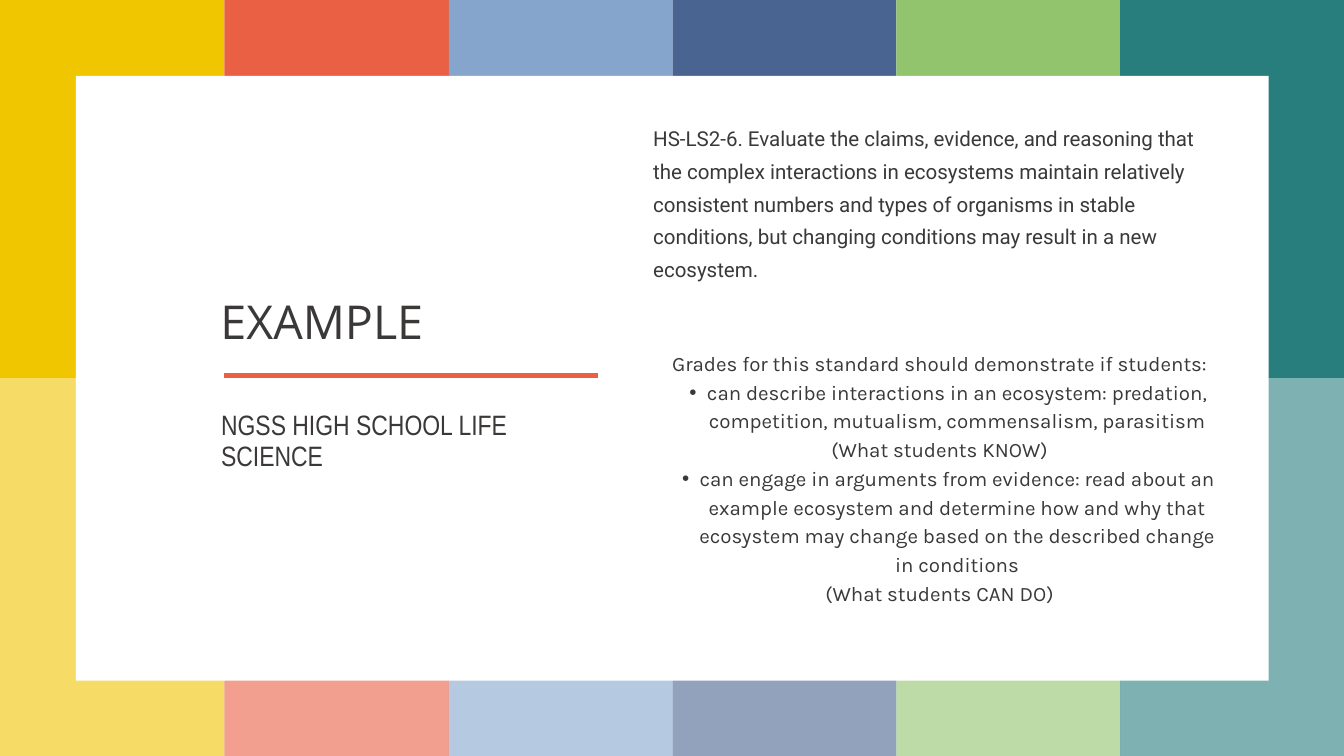
from lxml.etree import SubElement
from pptx import Presentation
from pptx.dml.color import RGBColor
from pptx.enum.shapes import MSO_CONNECTOR, MSO_SHAPE
from pptx.enum.text import MSO_AUTO_SIZE, PP_ALIGN
from pptx.oxml.ns import qn
from pptx.util import Inches, Pt

COLORS = {
    "yellow": "F0C600", "coral": "EA6045", "sky": "85A5CC",
    "navy": "4A6491", "green": "91C46C", "teal": "287D7D",
    "white": "FFFFFF", "text": "3B3838",
}

prs = Presentation()
prs.slide_width, prs.slide_height = Inches(20), Inches(11.25)
slide = prs.slides.add_slide(prs.slide_layouts[6])


def add_block(left, top, width, height, color, opacity=100):
    block = slide.shapes.add_shape(
        MSO_SHAPE.RECTANGLE, Inches(left), Inches(top), Inches(width), Inches(height))
    block.shadow.inherit = False
    block.line.fill.background()
    block.fill.solid()
    block.fill.fore_color.rgb = RGBColor.from_string(COLORS[color])
    if opacity < 100:
        srgb = block.fill._xPr.find(qn("a:solidFill"))[0]
        SubElement(srgb, qn("a:alpha"), val=str(opacity * 1000))


def add_text(left, top, width, height, paragraphs, font, size, spacing, align=PP_ALIGN.LEFT):
    """Each paragraph is a pair: its text and whether it is bulleted."""
    frame = slide.shapes.add_textbox(
        Inches(left), Inches(top), Inches(width), Inches(height)).text_frame
    frame_format = {"word_wrap": True, "auto_size": MSO_AUTO_SIZE.SHAPE_TO_FIT_TEXT,
                    "margin_left": 0, "margin_top": 0, "margin_right": 0, "margin_bottom": 0}
    for name, value in frame_format.items():
        setattr(frame, name, value)
    for i, (text, bulleted) in enumerate(paragraphs):
        paragraph = frame.add_paragraph() if i else frame.paragraphs[0]
        paragraph.alignment = align
        paragraph.line_spacing = Pt(spacing)
        if bulleted:
            paragraph.level = 1
            props = paragraph._p.get_or_add_pPr()
            props.set("marL", str(Inches(0.52)))
            props.set("indent", str(Inches(-0.26)))
            SubElement(props, qn("a:buFont"), typeface="Arial")
            SubElement(props, qn("a:buChar"), char="•")
        run = paragraph.add_run()
        run.text = text
        for name, value in {"name": font, "size": Pt(size)}.items():
            setattr(run.font, name, value)
        run.font.color.rgb = RGBColor.from_string(COLORS["text"])


# Background columns: solid above, paler below
column_edges = [0, 3.34, 6.68, 10.01, 13.34, 16.67, 20]
column_colors = ["yellow", "coral", "sky", "navy", "green", "teal"]
half_height = 11.25 / 2
for left, right, color in zip(column_edges, column_edges[1:], column_colors):
    add_block(left, 0, right - left, half_height, color)
    add_block(left, half_height, right - left, half_height, color, opacity=60)

# White panel
add_block(1.13, 1.13, 17.75, 9, "white")

# Rule under the title
title_rule = slide.shapes.add_connector(
    MSO_CONNECTOR.STRAIGHT, Inches(3.33), Inches(5.59), Inches(8.9), Inches(5.59))
title_rule.line.color.rgb = RGBColor.from_string(COLORS["coral"])
title_rule.line.width = Pt(5.25)
SubElement(title_rule._element.spPr, qn("a:effectLst"))

# Title and subject
add_text(3.28, 4.42, 6.21, 0.79, [("EXAMPLE", False)], "Open Sans", 50, 55)
add_text(3.29, 6.11, 5.61, 0.47, [("NGSS HIGH SCHOOL LIFE SCIENCE", False)],
         "Arial Narrow", 30, 33)

# Standard
standard = (
    "HS-LS2-6. Evaluate the claims, evidence, and reasoning that the complex interactions "
    "in ecosystems maintain relatively consistent numbers and types of organisms in stable "
    "conditions, but changing conditions may result in a new ecosystem.")
add_text(9.72, 1.75, 8.52, 2.37, [(standard, False)], "Roboto", 22, 35.2)

# Grading criteria
criteria = [
    ("Grades for this standard should demonstrate if students:", False),
    ("can describe interactions in an ecosystem: predation, competition, mutualism, "
     "commensalism, parasitism", True),
    ("(What students KNOW)", False),
    ("can engage in arguments from evidence: read about an example ecosystem and determine "
     "how and why that ecosystem may change based on the described change in conditions", True),
    ("(What students CAN DO)", False),
]
add_text(9.72, 5.16, 8.52, 3.82, criteria, "Karla", 22, 30.8, PP_ALIGN.CENTER)

prs.save("out.pptx")
